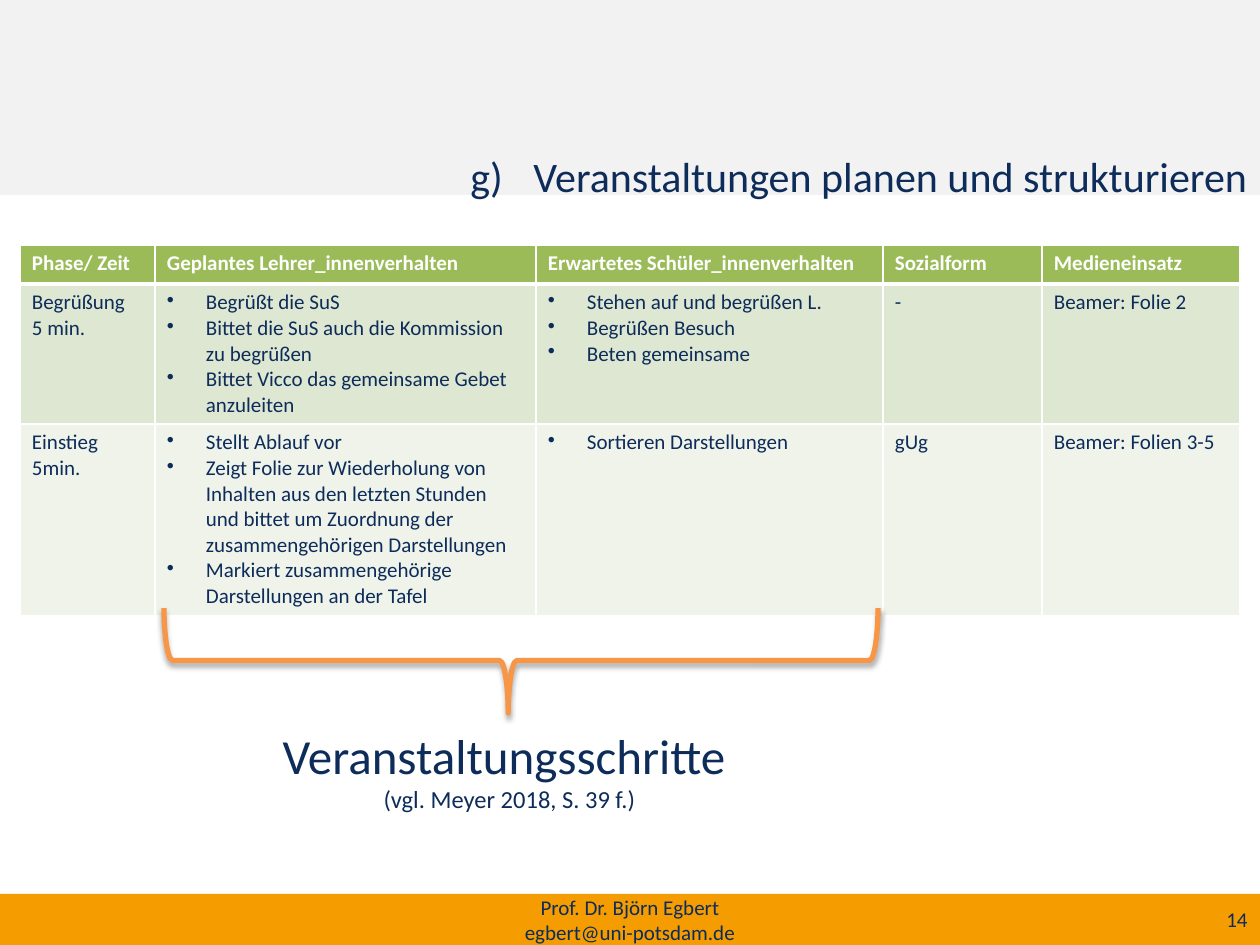
from dataclasses import dataclass

from lxml import etree
from pptx import Presentation
from pptx.dml.color import RGBColor
from pptx.enum.shapes import MSO_SHAPE
from pptx.enum.text import MSO_ANCHOR, MSO_AUTO_SIZE, PP_ALIGN
from pptx.oxml.ns import qn
from pptx.util import Emu, Pt

RECTANGLE, BRACE = MSO_SHAPE.RECTANGLE, MSO_SHAPE.RIGHT_BRACE
TOP, MIDDLE = MSO_ANCHOR.TOP, MSO_ANCHOR.MIDDLE
LEFT, CENTER, RIGHT = PP_ALIGN.LEFT, PP_ALIGN.CENTER, PP_ALIGN.RIGHT
NO_AUTOFIT = MSO_AUTO_SIZE.NONE
TITLE_ONLY = 5
EMU_PER_PX = 914400 / 126


@dataclass(frozen=True)
class Theme:
    font: str = "Calibri"
    ink: str = "0D2C5A"
    white: str = "FFFFFF"
    header_band: str = "F2F2F2"
    footer_band: str = "F59C00"
    table_head: str = "9BBB59"
    table_rows: tuple = ("DEE7D1", "EFF3EA")
    brace: str = "F79646"
    shadow: str = "000000"
    title_size: int = 24
    caption_size: int = 28
    source_size: int = 14
    body_size: int = 12


THEME = Theme()

COLUMN_WIDTHS = (135, 381, 347, 159, 198)
ROW_HEIGHTS = (39, 140, 192)
BULLETED_COLUMNS = (1, 2)
PLAN = (
    (("Phase/ Zeit",), ("Geplantes Lehrer_innenverhalten",),
     ("Erwartetes Schüler_innenverhalten",), ("Sozialform",), ("Medieneinsatz",)),
    (("Begrüßung", "5 min."),
     ("Begrüßt die SuS", "Bittet die SuS auch die Kommission zu begrüßen",
      "Bittet Vicco das gemeinsame Gebet anzuleiten"),
     ("Stehen auf und begrüßen L.", "Begrüßen Besuch", "Beten gemeinsame"),
     ("-",), ("Beamer: Folie 2",)),
    (("Einstieg", "5min."),
     ("Stellt Ablauf vor",
      "Zeigt Folie zur Wiederholung von Inhalten aus den letzten Stunden "
      "und bittet um Zuordnung der zusammengehörigen Darstellungen",
      "Markiert zusammengehörige Darstellungen an der Tafel"),
     ("Sortieren Darstellungen",), ("gUg",), ("Beamer: Folien 3-5",)),
)


def px(length):
    return Emu(round(length * EMU_PER_PX))


def box_emu(box):
    return [px(length) for length in box]


def apply(target, values):
    for name, value in values.items():
        setattr(target, name, value)


def paint(fill, color):
    fill.solid()
    fill.fore_color.rgb = RGBColor.from_string(color)


def add_marker(paragraph, tag, indent, **attributes):
    properties = paragraph._p.get_or_add_pPr()
    properties.set("marL", str(px(indent)))
    properties.set("indent", str(-px(indent)))
    etree.SubElement(properties, qn(tag), attributes)


def write_line(paragraph, text, size, align=LEFT, color=THEME.ink, bold=False):
    paragraph.text = text
    paragraph.alignment = align
    apply(paragraph.font, {"name": THEME.font, "size": Pt(size), "bold": bold})
    paragraph.font.color.rgb = RGBColor.from_string(color)


def next_paragraph(frame, index):
    return frame.add_paragraph() if index else frame.paragraphs[0]


def add_label(slide, box, lines, align, anchor=TOP, wrap=True):
    frame = slide.shapes.add_textbox(*box_emu(box)).text_frame
    apply(frame, {"word_wrap": wrap, "vertical_anchor": anchor})
    for index, (text, size) in enumerate(lines):
        write_line(next_paragraph(frame, index), text, size, align)


def add_band(slide, box, color):
    band = slide.shapes.add_shape(RECTANGLE, *box_emu(box))
    band.shadow.inherit = False
    paint(band.fill, color)
    band.line.fill.background()
    return band


def add_header(slide, box):
    left, top, width, height = box
    band = add_band(slide, box, THEME.header_band)
    title = slide.shapes.title
    band.element.addnext(title.element)
    places = box_emu((left + 174, top + 144, width - 174, 62))
    apply(title, dict(zip(("left", "top", "width", "height"), places)))
    apply(title.text_frame, {"word_wrap": True, "vertical_anchor": TOP,
                             "auto_size": NO_AUTOFIT})
    heading = title.text_frame.paragraphs[0]
    add_marker(heading, "a:buAutoNum", 63, type="alphaLcParenR", startAt="7")
    write_line(heading, "Veranstaltungen planen und strukturieren",
               THEME.title_size, RIGHT)


def add_footer(slide, box):
    left, top, width, height = box
    add_band(slide, box, THEME.footer_band)
    author = ("Prof. Dr. Björn Egbert\vegbert@uni-potsdam.de", THEME.body_size)
    add_label(slide, (left + 417, top, width - 834, height), [author], CENTER, MIDDLE)
    number = ("14", THEME.body_size)
    add_label(slide, (left + width - 302, top, 302, height), [number], RIGHT, MIDDLE)


def add_borders(cell, widths):
    properties = cell._tc.get_or_add_tcPr()
    for tag, width in zip(("a:lnL", "a:lnR", "a:lnT", "a:lnB"), widths):
        border = etree.SubElement(properties, qn(tag), w=str(Pt(width)))
        solid = etree.SubElement(border, qn("a:solidFill"))
        etree.SubElement(solid, qn("a:srgbClr"), val=THEME.white)


def fill_cell(cell, lines, row, column):
    is_head = row == 0
    add_borders(cell, (1, 1, 3 if row == 1 else 1, 3 if is_head else 1))
    paint(cell.fill, THEME.table_head if is_head else THEME.table_rows[row - 1])
    apply(cell, {"margin_left": px(12), "margin_right": px(12),
                 "margin_top": px(6), "margin_bottom": px(6)})
    for index, text in enumerate(lines):
        paragraph = next_paragraph(cell.text_frame, index)
        if not is_head and column in BULLETED_COLUMNS:
            add_marker(paragraph, "a:buChar", 39, char="•")
        write_line(paragraph, text, THEME.body_size,
                   color=THEME.white if is_head else THEME.ink, bold=is_head)


def add_plan(slide, box):
    plan = slide.shapes.add_table(len(PLAN), len(COLUMN_WIDTHS), *box_emu(box)).table
    for column, width in zip(plan.columns, COLUMN_WIDTHS):
        column.width = px(width)
    for row, height in zip(plan.rows, ROW_HEIGHTS):
        row.height = px(height)
    for row, entries in enumerate(PLAN):
        for column, lines in enumerate(entries):
            fill_cell(plan.cell(row, column), lines, row, column)


def add_shadow(shape):
    effects = etree.SubElement(shape.element.spPr, qn("a:effectLst"))
    shadow = etree.SubElement(effects, qn("a:outerShdw"), blurRad=str(Pt(3.1)),
                              dist=str(Pt(1.8)), dir="5400000", rotWithShape="0")
    color = etree.SubElement(shadow, qn("a:srgbClr"), val=THEME.shadow)
    etree.SubElement(color, qn("a:alpha"), val="35000")


def add_steps(slide, box):
    left, top, width, height = box
    depth = 105
    brace_box = (left + (width - depth) / 2, top + (depth - width) / 2, depth, width)
    brace = slide.shapes.add_shape(BRACE, *box_emu(brace_box))
    brace.rotation = 90
    brace.adjustments[0], brace.adjustments[1] = 0.083, 0.518
    brace.fill.background()
    paint(brace.line.fill, THEME.brace)
    brace.line.width = Pt(3)
    add_shadow(brace)
    lines = [("Veranstaltungsschritte ", THEME.caption_size),
             ("(vgl. Meyer 2018, S. 39 f.)", THEME.source_size)]
    add_label(slide, (left + 103, top + 111, 485, height - 111), lines, CENTER, wrap=False)


def main():
    deck = Presentation()
    apply(deck, {"slide_width": px(1260), "slide_height": px(945)})
    slide = deck.slides.add_slide(deck.slide_layouts[TITLE_ONLY])
    add_header(slide, (0, 0, 1260, 195))
    add_footer(slide, (0, 894, 1260, 51))
    add_plan(slide, (20, 245, sum(COLUMN_WIDTHS), sum(ROW_HEIGHTS)))
    add_steps(slide, (164, 608, 714, 213))
    deck.save("out.pptx")


if __name__ == "__main__":
    main()
